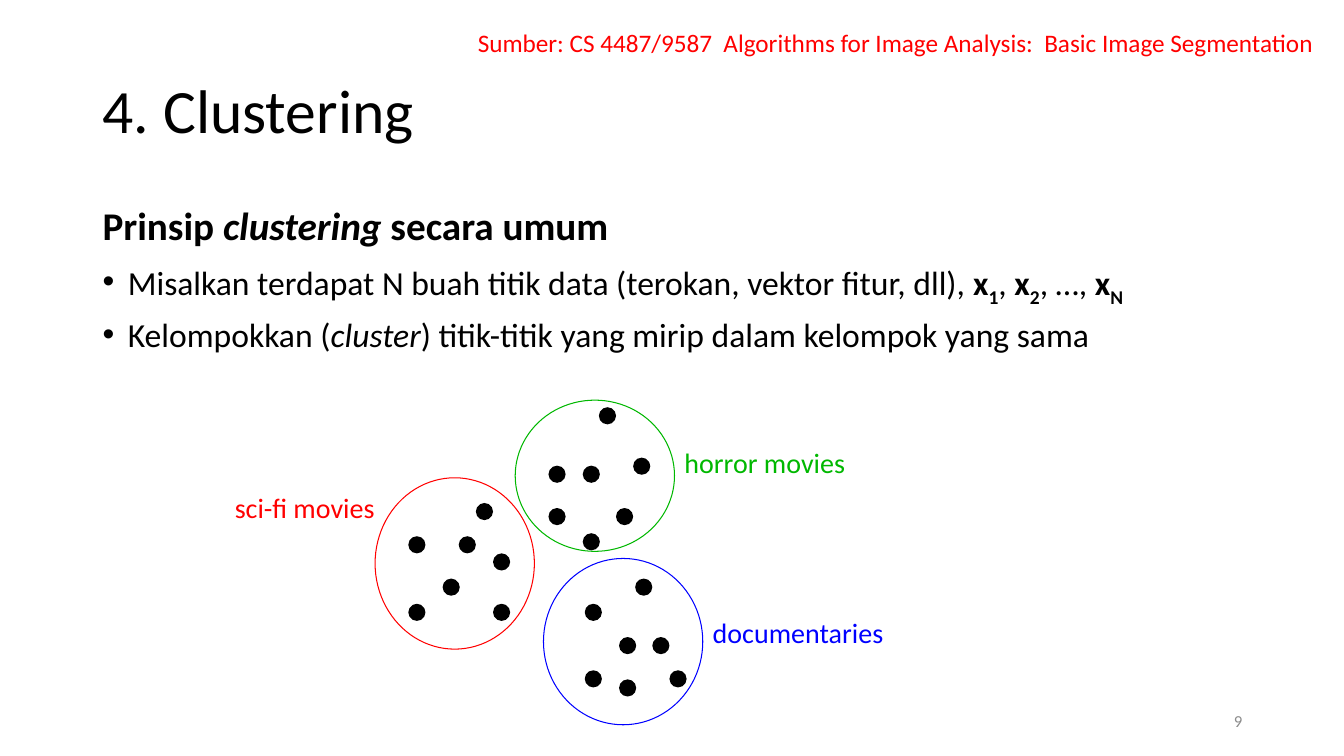
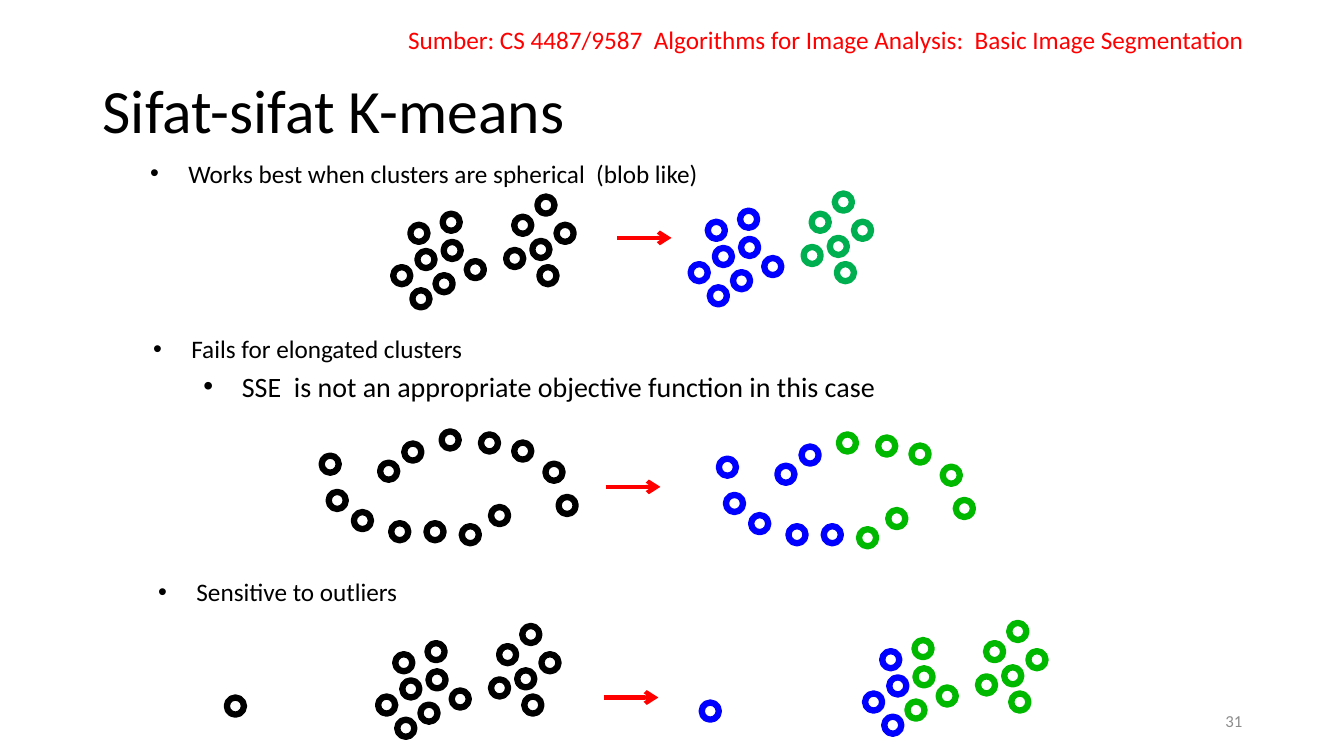
import dataclasses

import lxml.etree
import pptx
import pptx.dml.color
import pptx.enum.shapes
import pptx.enum.text
import pptx.oxml.ns
import pptx.util

Inches = pptx.util.Inches
Pt = pptx.util.Pt
qn = pptx.oxml.ns.qn


@dataclasses.dataclass(frozen=True)
class Theme:
    font: str = "Calibri"
    black: str = "000000"
    red: str = "FF0000"
    green: str = "00B800"
    leaf: str = "00B050"
    blue: str = "0000FF"
    gray: str = "8C8C8C"
    title: int = 44
    heading: int = 28
    body: int = 24
    label: int = 20
    note: int = 18
    number: int = 12
    thin: float = 0.75
    arrow: float = 3
    ring: float = 4.5
    dot: float = 0.17


THEME = Theme()
SOURCE = "Sumber: CS 4487/9587  Algorithms for Image Analysis:  Basic Image Segmentation"


def rgb(color):
    return pptx.dml.color.RGBColor.from_string(color)


def write(para, text, *, size, color=THEME.black, bold=False, italic=False, sub=False):
    """Append one formatted span to a paragraph."""
    span = para.add_run()
    span.text = text
    span.font.name = THEME.font
    span.font.size = Pt(size)
    span.font.color.rgb = rgb(color)
    span.font.bold = bold
    span.font.italic = italic
    if sub:
        span.font._element.set("baseline", "-25000")


class Deck:
    def __init__(self, theme):
        self.theme = theme
        self.deck = pptx.Presentation()
        self.deck.slide_width = Inches(13.33)
        self.deck.slide_height = Inches(7.5)
        self.page = None

    def start_page(self, title, number, source_at):
        """Open a slide with its title, source line and page number."""
        theme = self.theme
        middle = pptx.enum.text.MSO_ANCHOR.MIDDLE
        self.page = self.deck.slides.add_slide(self.deck.slide_layouts[6])
        box = self.box((0.92, 0.4, 11.5, 1.45), anchor=middle)
        write(self.para(box, line=0.9), title, size=theme.title)
        box = self.box(source_at)
        write(self.para(box), SOURCE, size=theme.note, color=theme.red)
        box = self.box((9.42, 6.95, 3, 0.4), anchor=middle)
        para = self.para(box)
        para.alignment = pptx.enum.text.PP_ALIGN.RIGHT
        write(para, number, size=theme.number, color=theme.gray)

    def box(self, at, anchor=pptx.enum.text.MSO_ANCHOR.TOP, wrap=True):
        box = self.page.shapes.add_textbox(*map(Inches, at))
        box.text_frame.word_wrap = wrap
        box.text_frame.vertical_anchor = anchor
        return box

    def para(self, box, line=1.0, before=0, bullet=None):
        """Next paragraph of a box; bullet is (left margin, hanging width)."""
        frame = box.text_frame
        first = frame.paragraphs[0]
        para = frame.add_paragraph() if first.runs else first
        para.line_spacing = line
        para.space_before = Pt(before)
        if bullet:
            margin, hanging = bullet
            properties = para._p.get_or_add_pPr()
            properties.set("marL", str(Inches(margin)))
            properties.set("indent", str(-Inches(hanging)))
            lxml.etree.SubElement(properties, qn("a:buFont")).set("typeface", "Arial")
            lxml.etree.SubElement(properties, qn("a:buChar")).set("char", "•")
        return para

    def label(self, text, at, color):
        box = self.box(at, wrap=False)
        write(self.para(box), text, size=self.theme.label, color=color)

    def points(self, at, items):
        """Bulleted list of (text, size, left margin)."""
        box = self.box(at)
        for text, size, margin in items:
            para = self.para(box, before=size * 0.2, bullet=(margin, 0.38))
            write(para, text, size=size)

    def ellipse(self, at, fill=None, line=None, width=THEME.thin):
        oval = pptx.enum.shapes.MSO_SHAPE.OVAL
        shape = self.page.shapes.add_shape(oval, *map(Inches, at))
        shape.shadow.inherit = False
        if fill:
            shape.fill.solid()
            shape.fill.fore_color.rgb = rgb(fill)
        else:
            shape.fill.background()
        if line:
            shape.line.color.rgb = rgb(line)
            shape.line.width = Pt(width)
        else:
            shape.line.fill.background()

    def dot(self, left, top):
        size = self.theme.dot
        self.ellipse((left, top, size, size), fill=self.theme.black)

    def ring(self, left, top, color):
        size = self.theme.dot
        self.ellipse((left, top, size, size), line=color, width=self.theme.ring)

    def scatter(self, offsets, origin, near, far=None, split=0):
        """Rings at the offsets; those right of the split take the far colour."""
        left, top = origin
        for across, down in offsets:
            color = far if far and across > split else near
            self.ring(left + across, top + down, color)

    def arrow(self, left, top, length=0.54):
        connector = self.page.shapes.add_connector(
            pptx.enum.shapes.MSO_CONNECTOR.STRAIGHT,
            Inches(left), Inches(top), Inches(left + length), Inches(top))
        connector.line.color.rgb = rgb(self.theme.red)
        connector.line.width = Pt(self.theme.arrow)
        properties = connector.element.spPr
        tail = lxml.etree.SubElement(properties.find(qn("a:ln")), qn("a:tailEnd"))
        tail.set("type", "arrow")
        lxml.etree.SubElement(properties, qn("a:effectLst"))


# Movie clusters: outline, colour, label, label place, dots
CLUSTERS = [
    ((3.72, 4.74, 1.58, 1.7), THEME.red, "sci-fi movies", (2.23, 4.82, 1.61, 0.44),
     [(4.05, 5.32), (4.72, 4.99), (4.89, 5.49), (4.39, 5.74),
      (4.89, 5.99), (4.55, 5.32), (4.05, 5.99)]),
    ((5.11, 3.97, 1.58, 1.5), THEME.green, "horror movies", (6.69, 4.37, 1.81, 0.44),
     [(5.44, 4.62), (5.78, 4.62), (6.28, 4.54), (5.78, 5.29),
      (6.11, 5.04), (5.94, 4.04), (5.44, 5.04)]),
    ((5.39, 5.54, 1.58, 1.65), THEME.blue, "documentaries", (6.97, 6.06, 1.91, 0.44),
     [(5.8, 5.99), (6.14, 6.32), (6.47, 6.32), (6.14, 6.74),
      (6.64, 6.65), (6.3, 5.74), (5.8, 6.65)]),
]

# Ring offsets from the top left of each group
BLOBS = [(0.5, 0.45), (0, 0.7), (0.42, 0.78), (0.17, 0.28), (0.19, 0.93),
         (0.24, 0.54), (0.73, 0.64), (0.49, 0.17), (1.62, 0.28), (1.38, 0.44),
         (1.12, 0.53), (1.45, 0.7), (1.2, 0.2), (1.43, 0)]
ARCS = [(1.19, 0), (1.91, 0.11), (0.82, 0.12), (2.22, 0.32), (0.69, 0.91),
        (1.39, 0.94), (1.04, 0.91), (1.58, 0.03), (1.68, 0.75), (0.58, 0.31),
        (0.32, 0.8), (0, 0.24), (0.07, 0.6), (2.35, 0.65)]


def clustering_page(deck):
    theme = deck.theme
    deck.start_page("4. Clustering", "9", (4.64, 0.22, 10.38, 0.4))

    # Principle and its two points
    box = deck.box((0.92, 2, 11.5, 4.76))
    para = deck.para(box, line=0.9, before=10)
    for text, italic in [("Prinsip ", False), ("clustering ", True), ("secara umum", False)]:
        write(para, text, size=theme.heading, bold=True, italic=italic)
    para = deck.para(box, line=0.9, before=10, bullet=(0.25, 0.25))
    lead = "Misalkan terdapat N buah titik data (terokan, vektor fitur, dll), "
    for text, index in [(lead, "1"), (", ", "2"), (", …, ", "N")]:
        write(para, text, size=theme.body)
        write(para, "x", size=theme.body, bold=True)
        write(para, index, size=theme.body, bold=True, sub=True)
    para = deck.para(box, line=0.9, before=10, bullet=(0.25, 0.25))
    write(para, "Kelompokkan (", size=theme.body)
    write(para, "cluster", size=theme.body, italic=True)
    write(para, ") titik-titik yang mirip dalam kelompok yang sama", size=theme.body)

    # Clusters
    for outline, color, name, name_at, dots in CLUSTERS:
        for left, top in dots:
            deck.dot(left, top)
        deck.ellipse(outline, line=color)
        deck.label(name, name_at, color)


def kmeans_page(deck):
    theme = deck.theme
    deck.start_page("Sifat-sifat K-means", "31", (3.95, 0.19, 8.77, 0.4))

    # Spherical clusters
    deck.points((1.39, 1.52, 8.74, 0.67),
                [("Works best when clusters are spherical  (blob like)", theme.note, 0.38)])
    deck.scatter(BLOBS, (3.9, 1.95), theme.black)
    deck.arrow(6.12, 2.36)
    deck.scatter(BLOBS, (6.85, 1.92), theme.blue, theme.leaf, split=1)

    # Elongated clusters
    deck.points((1.42, 3.26, 8.83, 0.67), [
        ("Fails for elongated clusters", theme.note, 0.38),
        ("SSE  is not an appropriate objective function in this case", theme.label, 0.88)])
    deck.scatter(ARCS, (3.19, 4.28), theme.black)
    deck.arrow(6.01, 4.83)
    deck.scatter(ARCS, (7.13, 4.31), theme.blue, theme.green, split=1.1)

    # Outliers
    deck.points((1.47, 5.67, 4.62, 0.67), [("Sensitive to outliers", theme.note, 0.38)])
    deck.scatter(BLOBS, (3.75, 6.21), theme.black)
    deck.ring(2.25, 6.92, theme.black)
    deck.arrow(5.99, 6.92)
    deck.scatter(BLOBS, (8.58, 6.18), theme.blue, theme.green, split=0.3)
    deck.ring(6.96, 6.97, theme.blue)


def main():
    deck = Deck(THEME)
    clustering_page(deck)
    kmeans_page(deck)
    deck.deck.save("out.pptx")


if __name__ == "__main__":
    main()
